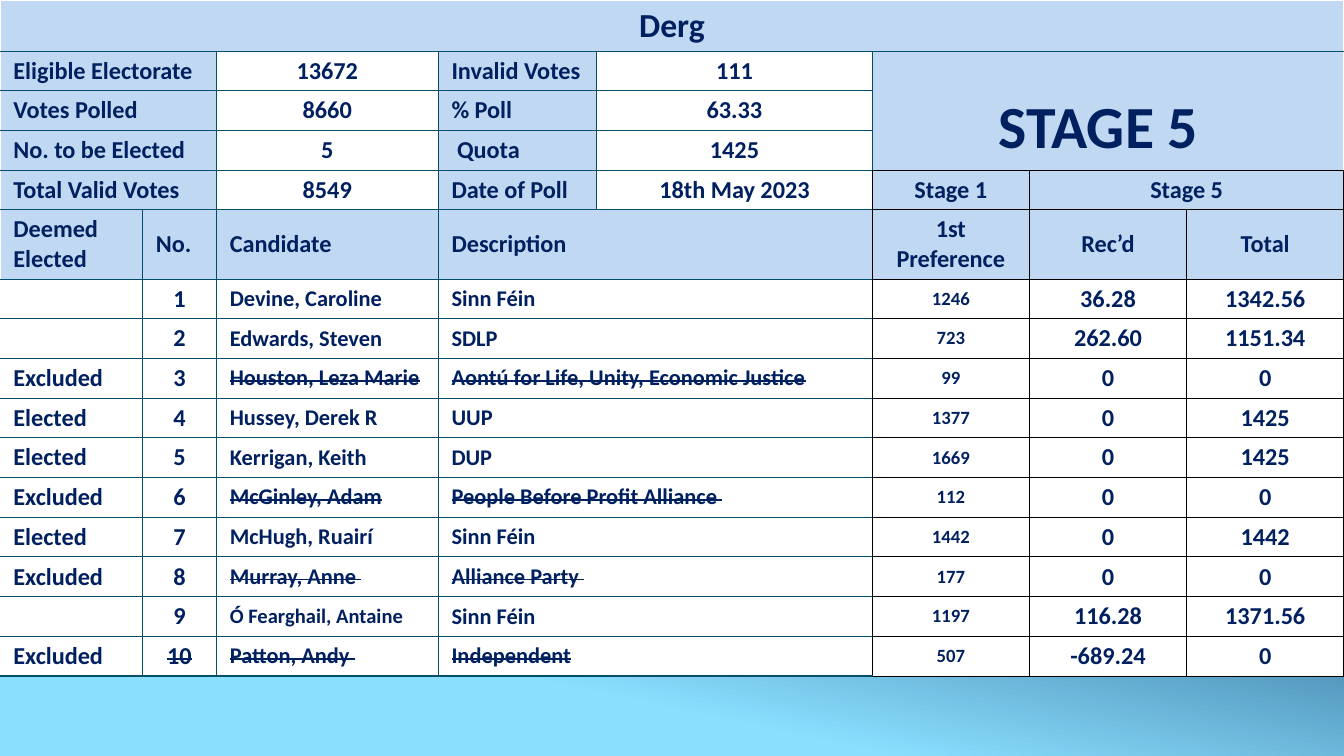
from pptx import Presentation
from pptx.dml.color import RGBColor
from pptx.enum import text
from pptx.oxml import xmlchemy
from pptx.util import Inches, Pt

COLORS = {"navy": "002060", "pale": "C1D8F2", "white": "FFFFFF", "teal": "004E6C",
          "black": "000000", "deep": "0D3868", "sky": "8ADFFF"}
FONT = "Calibri"
LEFT, CENTER = text.PP_ALIGN.LEFT, text.PP_ALIGN.CENTER
WIDTHS = [1.06, 0.55, 1.65, 1.18, 2.05, 1.17, 1.17, 1.17]
HEIGHTS = [0.37] + [0.28] * 4 + [0.48] + [0.28] * 10
INSET = 0.15 / 4
LINE_WIDTHS = {"white": 1, "teal": 0.75, "black": 0.5}

SUMMARY = [
    ("Eligible Electorate", "13672", "Invalid Votes", "111"),
    ("Votes Polled", "8660", "% Poll", "63.33"),
    ("No. to be Elected", "5", " Quota", "1425"),
    ("Total Valid Votes", "8549", "Date of Poll", "18th May 2023"),
]
CANDIDATES = [
    ("", "Devine, Caroline", "Sinn Féin", "1246", "36.28", "1342.56"),
    ("", "Edwards, Steven", "SDLP", "723", "262.60", "1151.34"),
    ("Excluded", "Houston, Leza Marie", "Aontú for Life, Unity, Economic Justice", "99", "0", "0"),
    ("Elected", "Hussey, Derek R", "UUP", "1377", "0", "1425"),
    ("Elected", "Kerrigan, Keith", "DUP", "1669", "0", "1425"),
    ("Excluded", "McGinley, Adam", "People Before Profit Alliance ", "112", "0", "0"),
    ("Elected", "McHugh, Ruairí", "Sinn Féin", "1442", "0", "1442"),
    ("Excluded", "Murray, Anne ", "Alliance Party ", "177", "0", "0"),
    ("", "Ó Fearghail, Antaine", "Sinn Féin", "1197", "116.28", "1371.56"),
    ("Excluded", "Patton, Andy ", "Independent", "507", "-689.24", "0"),
]


def rgb(name):
    return RGBColor.from_string(COLORS[name])


def set_background(s):
    fill = s.background.fill
    fill.gradient()
    fill.gradient_angle = 360 - 102
    for stop, position, color in zip(fill.gradient_stops, (0.42, 0.82), ("deep", "sky")):
        stop.position = position
        stop.color.rgb = rgb(color)


def edge_colors(row, col):
    if row == 0:
        return {"L": "white", "R": "white", "T": "white", "B": "teal"}
    if col >= 5 and row >= 4:
        return dict.fromkeys("LRTB", "black")
    edges = dict.fromkeys("LRTB", "teal")
    if col == 0:
        edges["L"] = "white"
    if col == 5:
        edges.update(R="white", B="black")
    if (row == 4 and col == 4) or (row >= 5 and col == 3):
        edges["R"] = "black"
    return edges


def draw_borders(cell, edges):
    tc_pr = cell._tc.get_or_add_tcPr()
    for side, color in edges.items():
        ln = xmlchemy.OxmlElement(f"a:ln{side}")
        ln.set("w", str(Pt(LINE_WIDTHS[color])))
        solid = xmlchemy.OxmlElement("a:solidFill")
        clr = xmlchemy.OxmlElement("a:srgbClr")
        clr.set("val", COLORS[color])
        solid.append(clr)
        ln.append(solid)
        tc_pr.append(ln)


def style_cell(cell, fill, edges):
    draw_borders(cell, edges)
    cell.fill.solid()
    cell.fill.fore_color.rgb = rgb(fill)
    cell.margin_left = cell.margin_right = Inches(0.1)
    cell.margin_top = cell.margin_bottom = Inches(INSET)
    cell.vertical_anchor = text.MSO_ANCHOR.MIDDLE
    cell.text_frame.paragraphs[0]._p.get_or_add_endParaRPr().set("sz", "1300")


def add_run(p, content, size, strike=False):
    r = p.add_run()
    r.text = content
    r.font.name = FONT
    r.font.size = Pt(size)
    r.font.bold = True
    r.font.color.rgb = rgb("navy")
    if strike:
        r.font._element.set("strike", "sngStrike")


def put(table, row, col, content, size=13, align=LEFT, fill="white", strike=False, rows=1, cols=1):
    cell = table.cell(row, col)
    if rows * cols > 1:
        cell.merge(table.cell(row + rows - 1, col + cols - 1))
    for i in range(row, row + rows):
        for j in range(col, col + cols):
            style_cell(table.cell(i, j), fill, edge_colors(row, col))
    p = cell.text_frame.paragraphs[0]
    p.alignment = align
    if content:
        add_run(p, content, size, strike)
    return cell


def add_grid(s):
    frame = s.shapes.add_table(len(HEIGHTS), len(WIDTHS), 0, 0, Inches(10), Inches(4.97))
    table = frame.table
    table.first_row = table.horz_banding = False
    for column, width in zip(table.columns, WIDTHS):
        column.width = Inches(width)
    for row, height in zip(table.rows, HEIGHTS):
        row.height = Inches(height)
    frame.height = Inches(4.97)
    return table


def fill_summary(table):
    put(table, 0, 0, "Derg", 18, CENTER, "pale", cols=8)
    for row, (label, value, label2, value2) in enumerate(SUMMARY, 1):
        put(table, row, 0, label, fill="pale", cols=2)
        put(table, row, 2, value, align=CENTER)
        put(table, row, 3, label2, fill="pale")
        put(table, row, 4, value2, align=CENTER)
    stage = put(table, 1, 5, "STAGE 5 ", 32, CENTER, "pale", rows=3, cols=3)
    stage.vertical_anchor = text.MSO_ANCHOR.BOTTOM
    add_run(stage.text_frame.paragraphs[0], " ", 13)


def fill_headings(table):
    put(table, 4, 5, "Stage 1", align=CENTER, fill="pale")
    put(table, 4, 6, "Stage 5", align=CENTER, fill="pale", cols=2)
    for col, heading in enumerate(("Deemed Elected", "No.", "Candidate")):
        put(table, 5, col, heading, fill="pale")
    put(table, 5, 3, "Description", fill="pale", cols=2)
    for col, heading in enumerate(("1st Preference", "Rec’d", "Total"), 5):
        put(table, 5, col, heading, align=CENTER, fill="pale")


def fill_candidates(table):
    for number, (status, name, party, first, received, total) in enumerate(CANDIDATES, 1):
        row = number + 5
        excluded = status == "Excluded"
        put(table, row, 0, status)
        put(table, row, 1, str(number), align=CENTER, strike=received.startswith("-"))
        put(table, row, 2, name, 11 if len(name) > 19 else 12, strike=excluded)
        put(table, row, 3, party, 12, strike=excluded, cols=2)
        put(table, row, 5, first, 10, CENTER)
        put(table, row, 6, received, align=CENTER)
        put(table, row, 7, total, align=CENTER)


def main():
    prs = Presentation()
    prs.slide_width, prs.slide_height = Inches(10), Inches(10 * 9 / 16)
    s = prs.slides.add_slide(prs.slide_layouts[6])
    set_background(s)
    table = add_grid(s)
    fill_summary(table)
    fill_headings(table)
    fill_candidates(table)
    prs.save("out.pptx")


if __name__ == "__main__":
    main()
